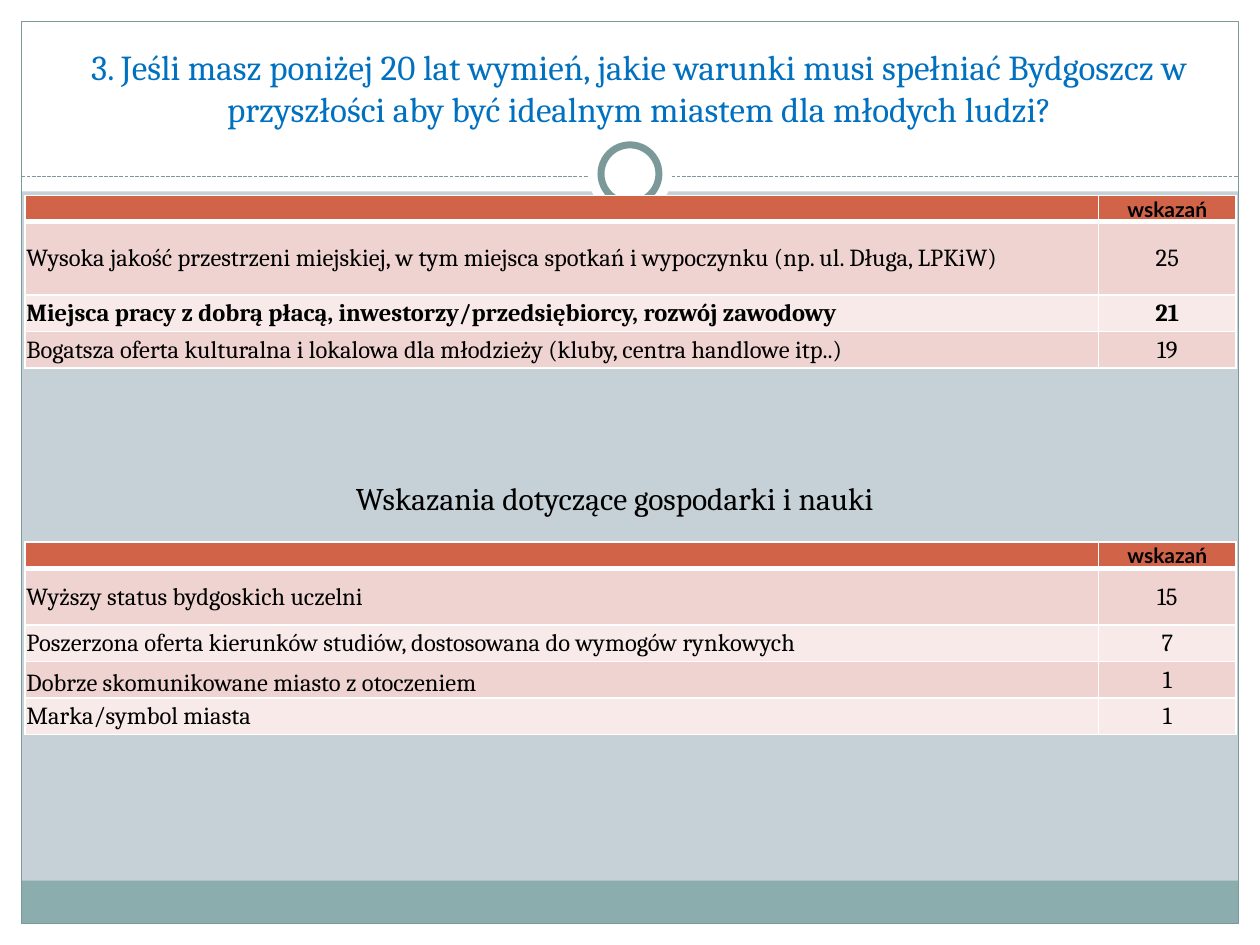
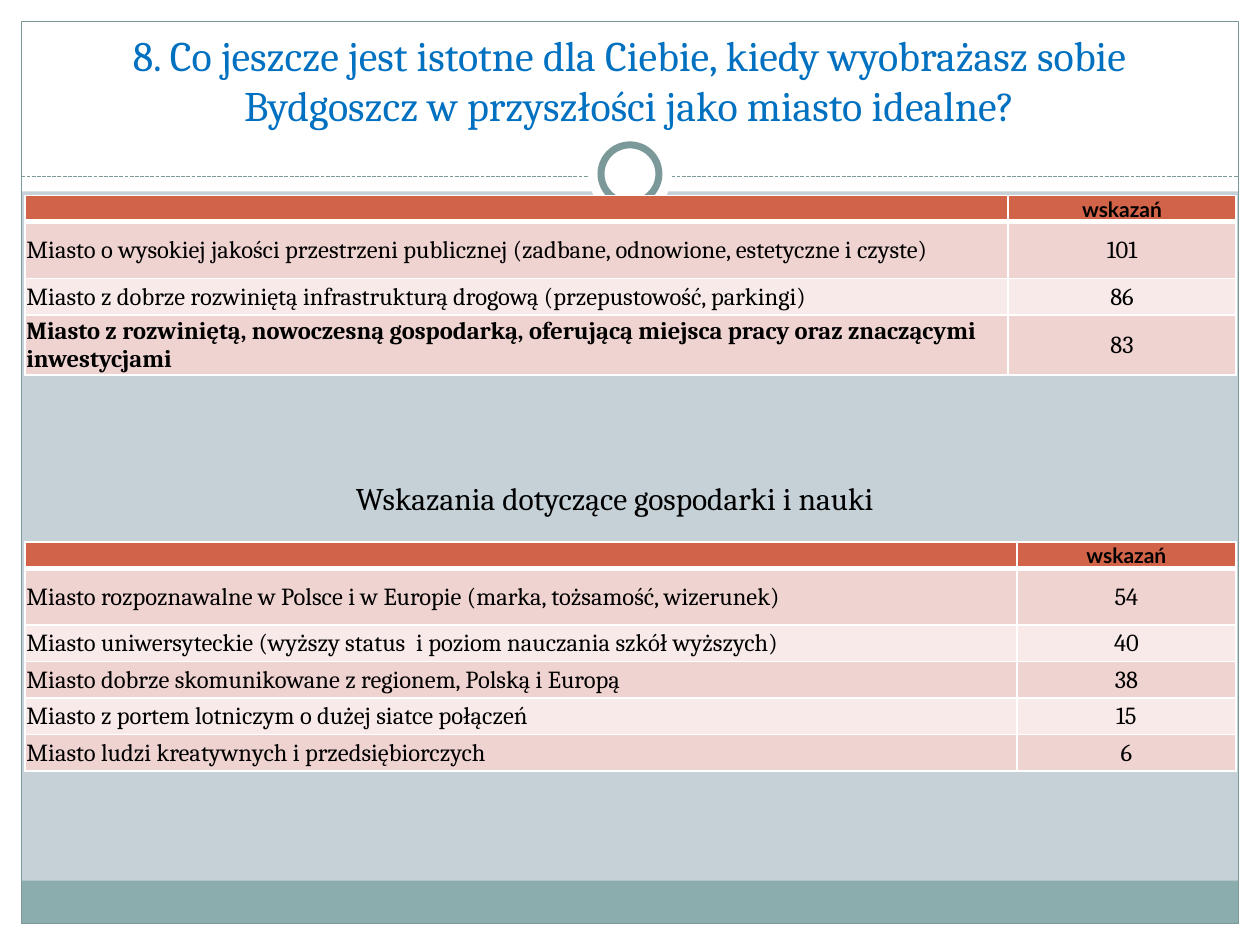
from lxml import etree
from pptx import Presentation
from pptx.dml.color import RGBColor
from pptx.enum import dml, shapes, text
from pptx.oxml.ns import qn
from pptx.util import Inches, Pt

COLORS = {
    "background": "C5D1D7", "white": "FFFFFF", "band": "8CADAE", "frame": "7C999A",
    "title": "0070C0", "text": "000000", "header": "D16349",
    "odd": "EED3D0", "even": "F7EAE9",
}
FONT, HEADER_FONT = "Cambria", "Lato"
SUBTITLE = "Wskazania dotyczące gospodarki i nauki"
COUNT_HEADER = "wskazań"

# Rows: label, count, then any of "bold label", "bold count", "low label".
SLIDES = [
    {
        "title": "3. Jeśli masz poniżej 20 lat wymień, jakie warunki musi spełniać Bydgoszcz w "
                 "przyszłości aby być idealnym miastem dla młodych ludzi?",
        "title_box": (0.35, 0.21, 9.45, 0.87), "title_size": 20,
        "tables": [
            {"label_width": 8.52, "heights": [0.58, 0.29, 0.29], "rows": [
                ("Wysoka jakość przestrzeni miejskiej, w tym miejsca spotkań i wypoczynku "
                 "(np. ul. Długa, LPKiW)", 25),
                ("Miejsca pracy z dobrą płacą, inwestorzy/przedsiębiorcy, rozwój zawodowy", 21,
                 "bold label", "bold count"),
                ("Bogatsza oferta kulturalna i lokalowa dla młodzieży "
                 "(kluby, centra handlowe itp..)", 19),
            ]},
            {"label_width": 8.52, "heights": [0.45, 0.29, 0.29, 0.29], "rows": [
                ("Wyższy status bydgoskich uczelni", 15),
                ("Poszerzona oferta kierunków studiów, dostosowana do wymogów rynkowych", 7),
                ("Dobrze skomunikowane miasto z otoczeniem", 1, "low label"),
                ("Marka/symbol miasta", 1),
            ]},
        ],
    },
    {
        "title": "8. Co jeszcze jest istotne dla Ciebie, kiedy wyobrażasz sobie "
                 "Bydgoszcz w przyszłości jako miasto idealne?",
        "title_box": (0.33, 0.25, 9.33, 0.83), "title_size": 24,
        "tables": [
            {"label_width": 7.8, "heights": [0.45, 0.29, 0.45], "rows": [
                ("Miasto o wysokiej jakości przestrzeni publicznej "
                 "(zadbane, odnowione, estetyczne i czyste)", 101),
                ("Miasto z dobrze rozwiniętą infrastrukturą drogową (przepustowość, parkingi)", 86),
                ("Miasto z rozwiniętą, nowoczesną gospodarką, oferującą miejsca pracy oraz "
                 "znaczącymi inwestycjami", 83, "bold label"),
            ]},
            {"label_width": 7.87, "heights": [0.45, 0.29, 0.29, 0.29, 0.29], "rows": [
                ("Miasto rozpoznawalne w Polsce i w Europie (marka, tożsamość, wizerunek)", 54),
                ("Miasto uniwersyteckie (wyższy status  i poziom nauczania szkół wyższych)", 40),
                ("Miasto dobrze skomunikowane z regionem, Polską i Europą", 38),
                ("Miasto z portem lotniczym o dużej siatce połączeń", 15),
                ("Miasto ludzi kreatywnych i przedsiębiorczych", 6),
            ]},
        ],
    },
]

WIDTH, HEIGHT, EDGE = 10, 7.5, 0.17
RULE_Y, RING_Y = 1.4, 1.38
TABLE_LEFT, TABLE_WIDTH, TABLE_TOPS = 0.2, 9.61, (1.55, 4.3)
HEADER_HEIGHT = 0.21
SUBTITLE_BOX = (0.35, 3.75, 9.06, 0.4)


def rgb(name):
    return RGBColor.from_string(COLORS[name])


def add_block(s, box, fill=None, line=None, weight=0.75, kind=shapes.MSO_SHAPE.RECTANGLE):
    sp = s.shapes.add_shape(kind, *map(Inches, box))
    sp.shadow.inherit = False
    if fill:
        sp.fill.solid()
        sp.fill.fore_color.rgb = rgb(fill)
    else:
        sp.fill.background()
    if line:
        sp.line.color.rgb = rgb(line)
        sp.line.width = Pt(weight)
    else:
        sp.line.fill.background()


def add_disc(s, size, **style):
    box = ((WIDTH - size) / 2, RING_Y - size / 2, size, size)
    add_block(s, box, "white", kind=shapes.MSO_SHAPE.OVAL, **style)


def add_frame(s):
    """Draw the white margins, bottom band, border, dashed rule and ring."""
    s.background.fill.solid()
    s.background.fill.fore_color.rgb = rgb("background")
    for box in ((0, HEIGHT - EDGE, WIDTH, EDGE), (0, 0, WIDTH, 1.52),
                (0, 0, EDGE, HEIGHT), (WIDTH - EDGE, 0, EDGE, HEIGHT)):
        add_block(s, box, "white")
    inner = WIDTH - 2 * EDGE
    add_block(s, (EDGE, 6.99, inner, 0.34), "band")
    add_block(s, (EDGE, EDGE, inner, HEIGHT - 2 * EDGE), line="frame")
    rule = s.shapes.add_connector(shapes.MSO_CONNECTOR.STRAIGHT, Inches(EDGE), Inches(RULE_Y),
                                  Inches(WIDTH - EDGE), Inches(RULE_Y))
    rule.line.color.rgb = rgb("frame")
    rule.line.width = Pt(0.75)
    rule.line.dash_style = dml.MSO_LINE.SQUARE_DOT
    etree.SubElement(rule._element.spPr, qn("a:effectLst"))
    add_disc(s, 0.67)
    add_disc(s, 0.46, line="frame", weight=4)


def add_run(p, words, size, color="text", font=FONT, bold=False):
    r = p.add_run()
    r.text = words
    r.font.size, r.font.name, r.font.bold = Pt(size), font, bold
    r.font.color.rgb = rgb(color)


def add_centred_text(s, box, words, size, color="text", anchor=text.MSO_ANCHOR.TOP):
    tf = s.shapes.add_textbox(*map(Inches, box)).text_frame
    tf.word_wrap = True
    tf.vertical_anchor = anchor
    p = tf.paragraphs[0]
    p.alignment = text.PP_ALIGN.CENTER
    add_run(p, words, size, color)


def style_cell(cell, fill, bottom=1, anchor=text.MSO_ANCHOR.MIDDLE):
    cell.margin_left = cell.margin_right = cell.margin_top = Inches(0.01)
    cell.margin_bottom = 0
    cell.vertical_anchor = anchor
    tcPr = cell._tc.get_or_add_tcPr()
    for side, weight in (("L", 1), ("R", 1), ("T", 1), ("B", bottom)):
        ln = etree.SubElement(tcPr, qn("a:ln" + side), w=str(Pt(weight)))
        solid = etree.SubElement(ln, qn("a:solidFill"))
        etree.SubElement(solid, qn("a:srgbClr"), val=COLORS["white"])
    cell.fill.solid()
    cell.fill.fore_color.rgb = rgb(fill)


def add_count_table(s, top, label_width, heights, rows):
    heights = [HEADER_HEIGHT, *heights]
    box = (TABLE_LEFT, top, TABLE_WIDTH, sum(heights))
    table = s.shapes.add_table(len(heights), 2, *map(Inches, box)).table
    for column, width in zip(table.columns, (label_width, TABLE_WIDTH - label_width)):
        column.width = Inches(width)
    for row, height in zip(table.rows, heights):
        row.height = Inches(height)

    corner, count_head = table.rows[0].cells
    for cell in (corner, count_head):
        style_cell(cell, "header", bottom=3)
    etree.SubElement(corner.text_frame.paragraphs[0]._p, qn("a:endParaRPr"), sz="1000")
    p = count_head.text_frame.paragraphs[0]
    p.alignment = text.PP_ALIGN.CENTER
    add_run(p, COUNT_HEADER, 12, font=HEADER_FONT, bold=True)

    for i, (label, count, *marks) in enumerate(rows, 1):
        fill = "odd" if i % 2 else "even"
        label_cell, count_cell = table.cell(i, 0), table.cell(i, 1)
        low = "low label" in marks
        style_cell(label_cell, fill,
                   anchor=text.MSO_ANCHOR.BOTTOM if low else text.MSO_ANCHOR.MIDDLE)
        style_cell(count_cell, fill)
        add_run(label_cell.text_frame.paragraphs[0], label, 14, bold="bold label" in marks)
        p = count_cell.text_frame.paragraphs[0]
        p.alignment = text.PP_ALIGN.CENTER
        add_run(p, str(count), 14, bold="bold count" in marks)


def main():
    prs = Presentation()
    prs.slide_width, prs.slide_height = Inches(WIDTH), Inches(HEIGHT)
    for content in SLIDES:
        s = prs.slides.add_slide(prs.slide_layouts[6])
        add_frame(s)
        add_centred_text(s, content["title_box"], content["title"], content["title_size"],
                         "title", text.MSO_ANCHOR.BOTTOM)
        add_centred_text(s, SUBTITLE_BOX, SUBTITLE, 18)
        for top, table in zip(TABLE_TOPS, content["tables"]):
            add_count_table(s, top, **table)
    prs.save("out.pptx")


if __name__ == "__main__":
    main()
